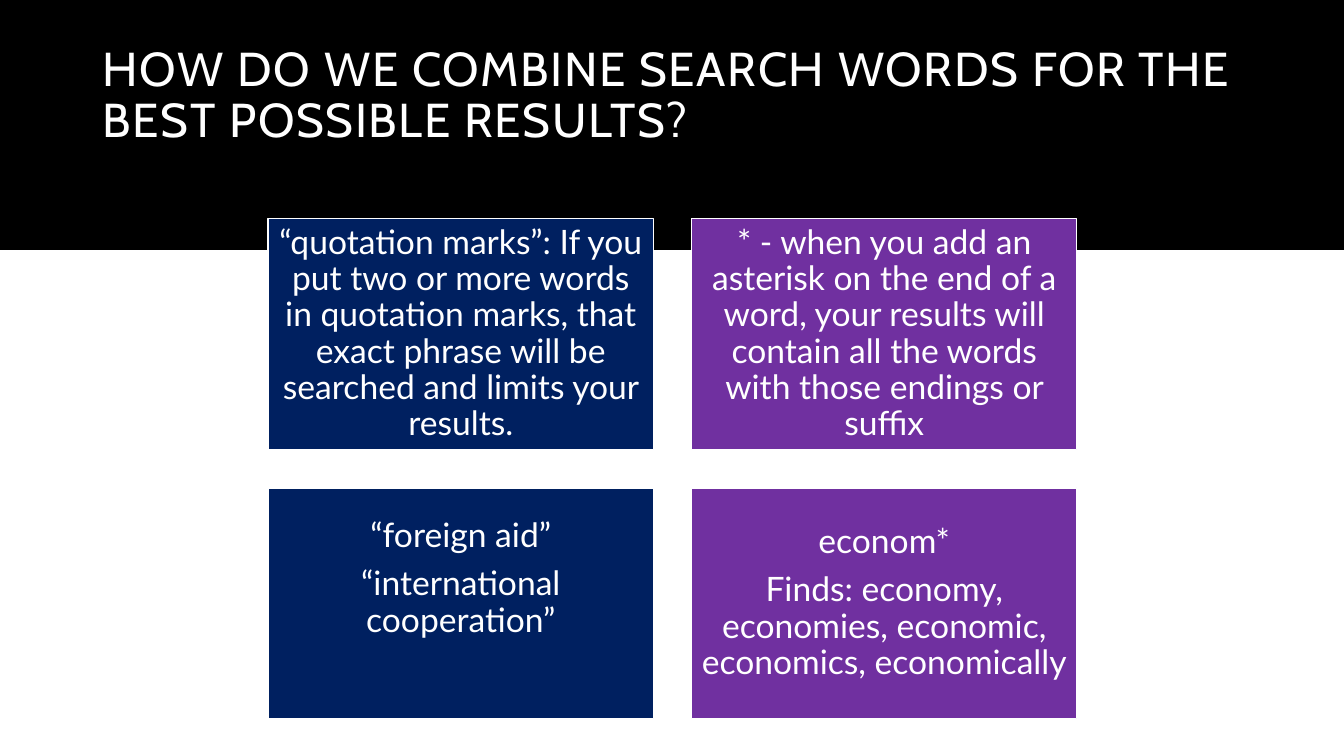
"""Build a slide on combining search words for the best results."""
from pptx import Presentation
from pptx.dml.color import RGBColor
from pptx.enum import shapes, text
from pptx.util import Inches, Pt

BLACK = RGBColor(0x00, 0x00, 0x00)
WHITE = RGBColor(0xFF, 0xFF, 0xFF)
NAVY = RGBColor(0x00, 0x20, 0x60)
PURPLE = RGBColor(0x70, 0x30, 0xA0)

TITLE = "HOW DO WE COMBINE SEARCH WORDS FOR THE BEST POSSIBLE RESULTS?"
CARD_WIDTH, CARD_HEIGHT = 3.82, 2.29
CARDS_LEFT, CARDS_TOP = 2.66, 2.17
COLUMN_STEP, ROW_STEP = 4.2, 2.67
INSET = 0.1
RAISED_INSET = 0.58

TECHNIQUES = [
    (NAVY, [
        (["“quotation marks”: If you put two or more words in quotation marks, "
          "that exact phrase will be searched and limits your results."], INSET),
        (["“foreign aid”", "“international cooperation”"], RAISED_INSET),
    ]),
    (PURPLE, [
        (["* - when you add an asterisk\u00a0on the end of a word, your results "
          "will contain all the words with those endings or suffix"], INSET),
        (["econom*", "Finds: economy, economies, economic, economics, economically"],
         INSET),
    ]),
]


def add_block(slide, left, top, width, height, color):
    """Add a flat filled rectangle without an outline."""
    block = slide.shapes.add_shape(
        shapes.MSO_SHAPE.RECTANGLE,
        Inches(left), Inches(top), Inches(width), Inches(height))
    block.shadow.inherit = False
    block.fill.solid()
    block.fill.fore_color.rgb = color
    block.line.fill.background()
    return block


def format_paragraph(paragraph, font_name, size, alignment):
    """Apply alignment, line spacing and white type to a paragraph."""
    paragraph.alignment = alignment
    paragraph.line_spacing = 0.9
    for run in paragraph.runs:
        run.font.name = font_name
        run.font.size = Pt(size)
        run.font.color.rgb = WHITE


def add_title(slide):
    """Add the letter-spaced title over the header band."""
    title = slide.shapes.add_textbox(
        Inches(0.92), Inches(0.37), Inches(11.49), Inches(1.18))
    frame = title.text_frame
    frame.word_wrap = True
    frame.vertical_anchor = text.MSO_ANCHOR.MIDDLE
    frame.text = TITLE
    heading = frame.paragraphs[0]
    format_paragraph(heading, "Cabin", 34, text.PP_ALIGN.LEFT)
    heading.runs[0].font._element.set("spc", "120")


def add_card(slide, left, top, color, lines, bottom_inset):
    """Add an outlined card with centred paragraphs."""
    card = add_block(slide, left, top, CARD_WIDTH, CARD_HEIGHT, color)
    card.line.color.rgb = WHITE
    card.line.width = Pt(1)
    frame = card.text_frame
    frame.word_wrap = True
    frame.vertical_anchor = text.MSO_ANCHOR.MIDDLE
    frame.margin_left = frame.margin_right = frame.margin_top = Inches(INSET)
    frame.margin_bottom = Inches(bottom_inset)
    frame.text = "\n".join(lines)
    for paragraph in frame.paragraphs:
        format_paragraph(paragraph, "Lato", 24, text.PP_ALIGN.CENTER)
        paragraph.space_after = Pt(8.4)


def main():
    """Build and save the slide."""
    deck = Presentation()
    deck.slide_width, deck.slide_height = Inches(13.33), Inches(7.5)
    slide = deck.slides.add_slide(deck.slide_layouts[6])
    add_block(slide, 0, 0, 13.33, 2.48, BLACK)
    add_title(slide)
    for column, (color, cards) in enumerate(TECHNIQUES):
        for row, (lines, bottom_inset) in enumerate(cards):
            add_card(slide, CARDS_LEFT + column * COLUMN_STEP,
                     CARDS_TOP + row * ROW_STEP, color, lines, bottom_inset)
    deck.save("out.pptx")


if __name__ == "__main__":
    main()
